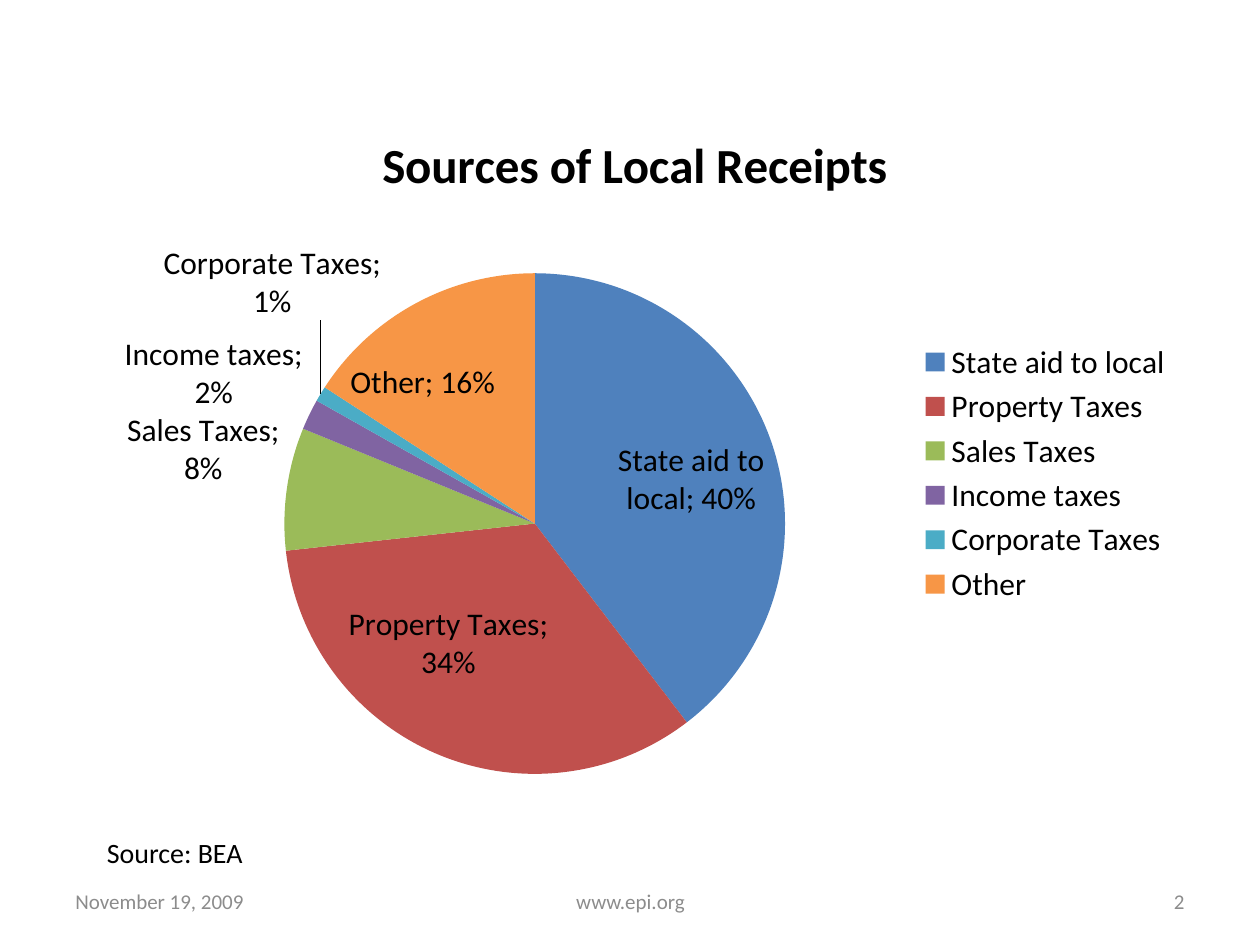
from lxml.etree import fromstring
from pptx import Presentation
from pptx.chart.data import CategoryChartData
from pptx.dml.color import RGBColor
from pptx.enum.chart import XL_CHART_TYPE, XL_LABEL_POSITION, XL_LEGEND_POSITION
from pptx.enum.text import MSO_ANCHOR, PP_ALIGN
from pptx.util import Inches, Pt

FONT = "Calibri"
COLORS = {"text": "000000", "footer": "8C8C8C"}
CHART_NS = "http://schemas.openxmlformats.org/drawingml/2006/chart"
RECEIPTS = [
    ("State aid to local", 0.40, "4F81BD"),
    ("Property Taxes", 0.34, "C0504D"),
    ("Sales Taxes", 0.08, "9BBB59"),
    ("Income taxes", 0.02, "8064A2"),
    ("Corporate Taxes", 0.01, "4BACC6"),
    ("Other", 0.16, "F79646"),
]

deck = Presentation()
deck.slide_width, deck.slide_height = Inches(10), Inches(7.5)
page = deck.slides.add_slide(deck.slide_layouts[6])


def add_text(text, left, top, width, height, size=12, color="footer",
             align=PP_ALIGN.LEFT, anchor=MSO_ANCHOR.MIDDLE):
    box = page.shapes.add_textbox(Inches(left), Inches(top), Inches(width), Inches(height))
    frame = box.text_frame
    frame.word_wrap = True
    frame.vertical_anchor = anchor
    para = frame.paragraphs[0]
    para.alignment = align
    span = para.add_run()
    span.text = text
    span.font.name, span.font.size = FONT, Pt(size)
    span.font.color.rgb = RGBColor.from_string(COLORS[color])


def chart_xml(markup):
    return fromstring(f'<c:root xmlns:c="{CHART_NS}">{markup}</c:root>')[0]


# Footer
add_text("November 19, 2009", 0.5, 6.95, 2.33, 0.4)
add_text("www.epi.org", 3.42, 6.95, 3.17, 0.4, align=PP_ALIGN.CENTER)
add_text("2", 7.17, 6.95, 2.33, 0.4, align=PP_ALIGN.RIGHT)

# Pie chart
data = CategoryChartData(number_format="0%")
data.categories = [name for name, share, color in RECEIPTS]
data.add_series("Series 1", [share for name, share, color in RECEIPTS])
chart = page.shapes.add_chart(XL_CHART_TYPE.PIE, Inches(0.58), Inches(0.67),
                              Inches(8.83), Inches(6.17), data).chart
chart.font.name, chart.font.size = FONT, Pt(18)
chart.font.color.rgb = RGBColor.from_string(COLORS["text"])
plot = chart.plots[0]
plot.vary_by_categories = True
series = plot.series[0]
for index, (name, share, color) in enumerate(RECEIPTS):
    fill = series.points[index].format.fill
    fill.solid()
    fill.fore_color.rgb = RGBColor.from_string(color)

# Title and legend
chart.has_title = True
title = chart.chart_title.text_frame.paragraphs[0]
span = title.add_run()
span.text = "Sources of Local Receipts"
span.font.name, span.font.size, span.font.bold = FONT, Pt(28), True
span.font.color.rgb = RGBColor.from_string(COLORS["text"])
chart.has_legend = True
chart.legend.position = XL_LEGEND_POSITION.RIGHT
chart.legend.include_in_layout = False

# Place the title and the pie as fractions of the chart area
title_layout = chart_xml(
    '<c:layout><c:manualLayout><c:xMode val="edge"/><c:yMode val="edge"/>'
    '<c:x val="0.27"/><c:y val="0.05"/></c:manualLayout></c:layout>')
pie_layout = chart_xml(
    '<c:layout><c:manualLayout><c:layoutTarget val="inner"/>'
    '<c:xMode val="edge"/><c:yMode val="edge"/><c:x val="0.19"/><c:y val="0.24"/>'
    '<c:w val="0.45"/><c:h val="0.65"/></c:manualLayout></c:layout>')
chart_root = series.format.fill and chart.element if hasattr(chart, "element") else chart._chartSpace
for parent, layout in (("c:title", title_layout), ("c:plotArea", pie_layout)):
    holder = chart_root.xpath(f"c:chart/{parent}")[0]
    for old in holder.xpath("c:layout"):
        holder.remove(old)
    if parent == "c:title":
        holder.xpath("c:tx")[0].addnext(layout)
    else:
        holder.insert(0, layout)

# Data labels, with the corporate one lifted clear of its neighbour
labels = series.data_labels
labels.number_format, labels.number_format_is_linked = "0%", False
labels.position = XL_LABEL_POSITION.BEST_FIT
labels.show_value = labels.show_category_name = True
label_root = chart_root.xpath(".//c:ser/c:dLbls")[0]
separator = "<c:separator>; </c:separator>"
label_root.xpath("c:showBubbleSize")[0].addnext(chart_xml(separator))
label_root.insert(0, chart_xml(
    '<c:dLbl><c:idx val="4"/><c:layout><c:manualLayout>'
    '<c:x val="0.06"/><c:y val="-0.09"/></c:manualLayout></c:layout>'
    '<c:dLblPos val="bestFit"/><c:showLegendKey val="0"/><c:showVal val="1"/>'
    '<c:showCatName val="1"/><c:showSerName val="0"/><c:showPercent val="0"/>'
    f'<c:showBubbleSize val="0"/>{separator}</c:dLbl>'))

# Source note
add_text("Source: BEA", 0.75, 6.58, 2.42, 0.37, size=16, color="text", anchor=MSO_ANCHOR.TOP)

deck.save("out.pptx")
